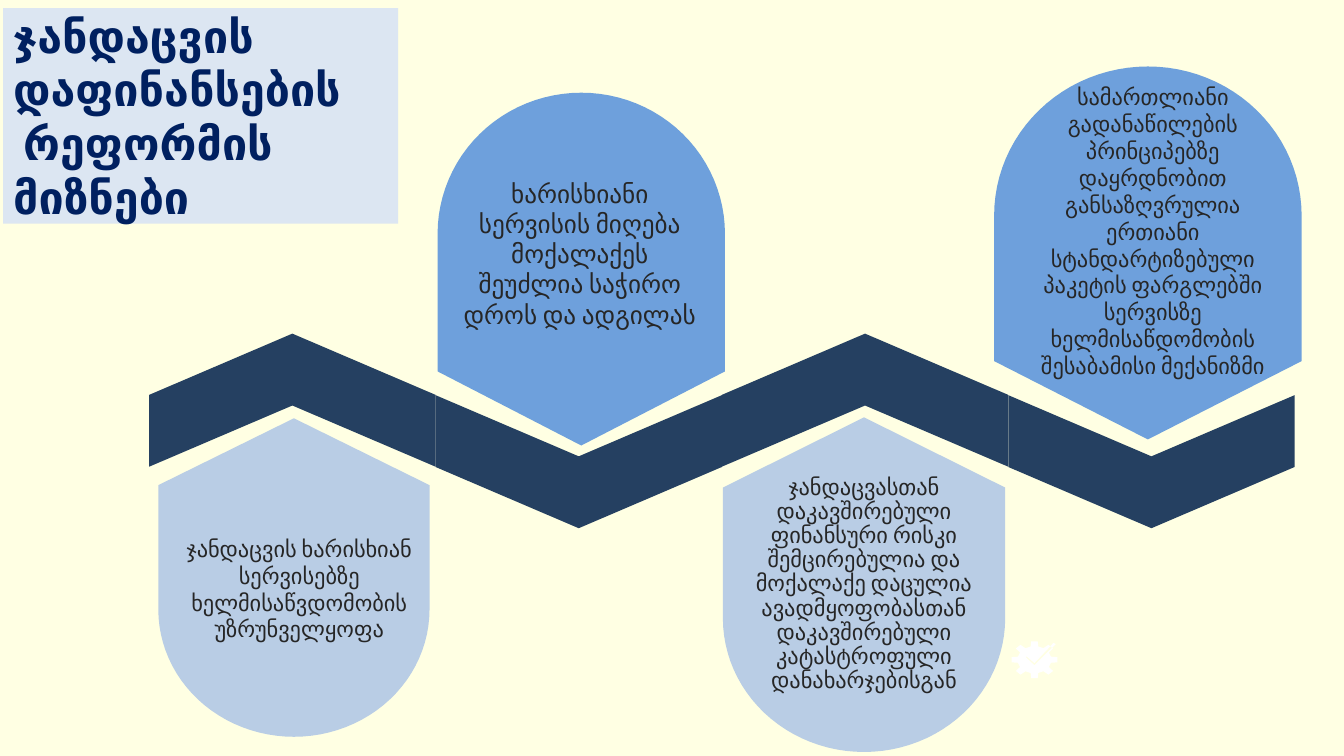
from math import cos, pi, radians, sin

from pptx import Presentation
from pptx.dml.color import RGBColor
from pptx.enum.shapes import MSO_SHAPE as Preset
from pptx.enum.text import MSO_ANCHOR as Anchor, MSO_AUTO_SIZE as AutoSize, PP_ALIGN as Align
from pptx.util import Inches, Pt

COLORS = {
    "background": "FFFFE3",
    "title_fill": "DCE6F2",
    "title_text": "002060",
    "band": "254061",
    "up": "B9CDE5",
    "down": "6EA0DC",
    "text": "262626",
    "badge": "FFFFFF",
}
FONT = "Calibri"
TITLE = "ჯანდაცვის დაფინანსების\v რეფორმის მიზნები"
TITLE_BOX = (0.03, 0.08, 3.92, 2.14)

GOALS = [
    {
        "text": "ჯანდაცვის ხარისხიან სერვისებზე ხელმისაწვდომობის უზრუნველყოფა",
        "points": "up", "pin": (1.57, 4.15, 2.69, 3.16), "label": (1.82, 5.1, 2.3, 1.48),
        "format": {"margins": (0, 0, 0, 0)},
    },
    {
        "text": "ჯანდაცვასთან დაკავშირებული ფინანსური რისკი შემცირებულია და მოქალაქე "
                "დაცულია ავადმყოფობასთან დაკავშირებული კატასტროფული დანახარჯებისგან",
        "points": "up", "pin": (7.17, 4.14, 2.8, 3.32), "label": None,
        "format": {"line_spacing": 0.9},
    },
    {
        "text": "ხარისხიანი სერვისის მიღება მოქალაქეს შეუძლია საჭირო დროს და ადგილას",
        "points": "down", "pin": (4.34, 0.92, 2.85, 3.5), "label": (4.54, 1.61, 2.42, 2.05),
        "format": {"size": 18, "margins": (0, 0, 0, 0.24)},
    },
    {
        "text": "სამართლიანი გადანაწილების პრინციპებზე დაყრდნობით განსაზღვრულია ერთიანი "
                "სტანდარტიზებული პაკეტის ფარგლებში სერვისზე ხელმისაწდომობის შესაბამისი მექანიზმი",
        "points": "down", "pin": (9.86, 0.66, 3.05, 3.7), "label": (10.11, 0.78, 2.65, 3.06),
        "format": {"anchor": Anchor.TOP},
    },
]

CHEVRON_COUNT, CHEVRON_SIZE, CHEVRON_NOTCH = 4, (1.32, 2.84), 0.46
BAND_LEFT, BAND_CENTERS = 1.48, (3.97, 4.58)
SHOULDER, ARC_START, ARC_STEPS = 0.21, 0.6, 48
GEAR_BOX, GEAR_TEETH, GEAR_ROOT = (10.03, 6.36, 0.46, 0.37), 8, 0.73
CHECK = [(0.31, 0.43), (0.33, 0.41), (0.5, 0.59), (0.91, 0.05),
         (0.96, 0.08), (0.52, 0.62), (0.5, 0.65)]


def color(name):
    return RGBColor.from_string(COLORS[name])


def paint(shape, fill):
    shape.shadow.inherit = False
    shape.fill.solid()
    shape.fill.fore_color.rgb = color(fill)
    shape.line.fill.background()


def write(shape, text, size=16, ink="text", bold=False, align=Align.CENTER,
          anchor=Anchor.MIDDLE, margins=(0.1, 0.05, 0.1, 0.05), line_spacing=None):
    frame = shape.text_frame
    frame.text = text
    frame.word_wrap = True
    frame.auto_size = AutoSize.NONE
    frame.vertical_anchor = anchor
    (frame.margin_left, frame.margin_top,
     frame.margin_right, frame.margin_bottom) = map(Inches, margins)
    paragraph = frame.paragraphs[0]
    paragraph.alignment = align
    if line_spacing:
        paragraph.line_spacing = line_spacing
    for run in paragraph.runs:
        run.font.name, run.font.size, run.font.bold = FONT, Pt(size), bold
        run.font.color.rgb = color(ink)


def add_outline(slide, box, contours, fill):
    left, top, width, height = box
    builder = None
    for contour in contours:
        points = [(Inches(left + x * width), Inches(top + y * height)) for x, y in contour]
        if builder is None:
            builder = slide.shapes.build_freeform(*points[0], scale=1)
        else:
            builder.move_to(*points[0])
        builder.add_line_segments(points[1:], close=True)
    shape = builder.convert_to_shape()
    paint(shape, fill)
    return shape


def pin_points(direction):
    arc = [(0.5 + cos(pi * step / ARC_STEPS) / 2,
            ARC_START + (1 - ARC_START) * sin(pi * step / ARC_STEPS))
           for step in range(ARC_STEPS + 1)]
    points = [(0.5, 0), (1, SHOULDER), *arc, (0, SHOULDER)]
    return points if direction == "up" else [(x, 1 - y) for x, y in points]


def gear_points():
    profile = [(-13, GEAR_ROOT), (-8, 1), (8, 1), (13, GEAR_ROOT)]
    return [(0.5 + radius / 2 * cos(radians(360 / GEAR_TEETH * tooth + angle)),
             0.5 + radius / 2 * sin(radians(360 / GEAR_TEETH * tooth + angle)))
            for tooth in range(GEAR_TEETH) for angle, radius in profile]


def add_band(slide):
    width, height = CHEVRON_SIZE
    for index in range(CHEVRON_COUNT):
        center_x = BAND_LEFT + (index + 0.5) * height
        center_y = BAND_CENTERS[index % 2]
        chevron = slide.shapes.add_shape(
            Preset.CHEVRON, Inches(center_x - width / 2), Inches(center_y - height / 2),
            Inches(width), Inches(height))
        chevron.adjustments[0] = CHEVRON_NOTCH
        chevron.rotation = 90 if index % 2 else 270
        paint(chevron, "band")


def add_goal(slide, goal):
    target = add_outline(slide, goal["pin"], [pin_points(goal["points"])], goal["points"])
    if goal["label"]:
        target = slide.shapes.add_textbox(*map(Inches, goal["label"]))
    write(target, goal["text"], **goal["format"])


def main():
    presentation = Presentation()
    presentation.slide_width, presentation.slide_height = Inches(13.33), Inches(7.5)
    slide = presentation.slides.add_slide(presentation.slide_layouts[5])
    slide.background.fill.solid()
    slide.background.fill.fore_color.rgb = color("background")

    title = slide.shapes.title
    title.left, title.top, title.width, title.height = map(Inches, TITLE_BOX)
    title.fill.solid()
    title.fill.fore_color.rgb = color("title_fill")
    write(title, TITLE, size=32, ink="title_text", bold=True, align=Align.LEFT)

    add_band(slide)
    for goal in GOALS:
        add_goal(slide, goal)
    add_outline(slide, GEAR_BOX, [gear_points(), CHECK], "badge")
    presentation.save("out.pptx")


if __name__ == "__main__":
    main()
